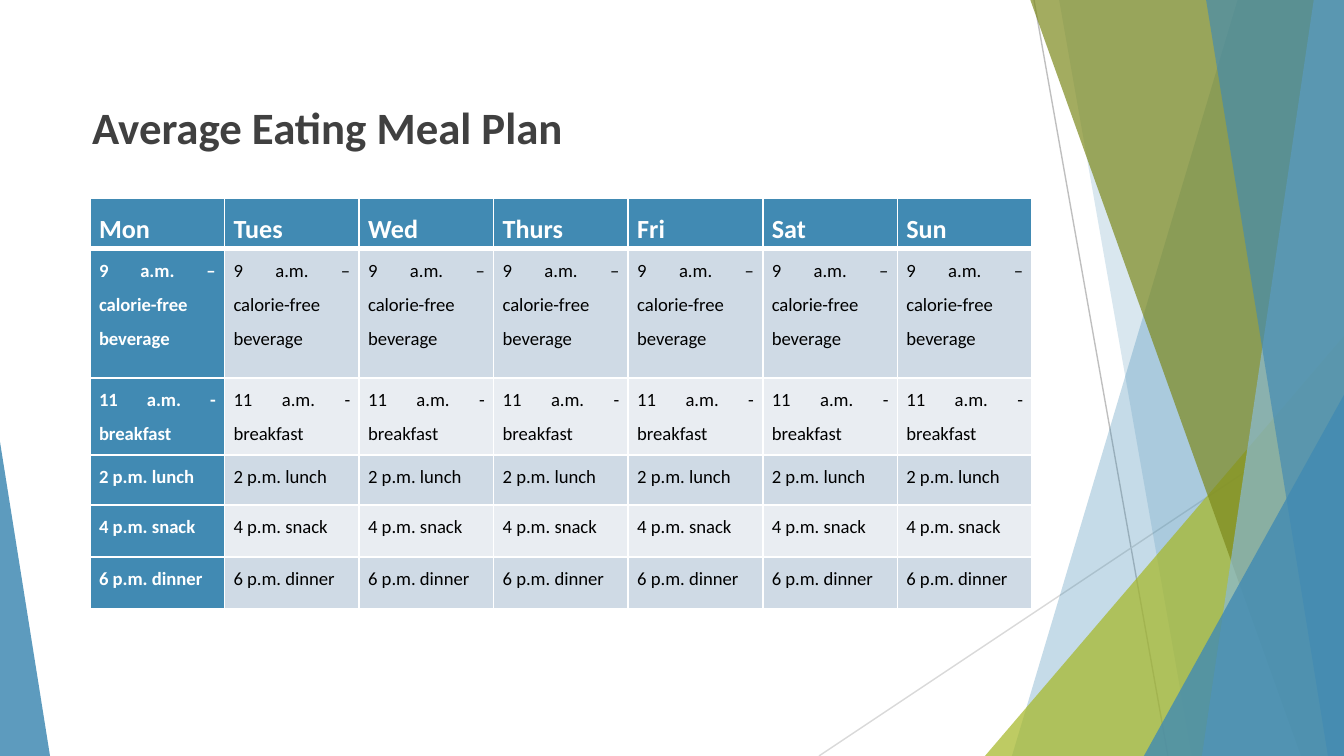
from lxml.etree import SubElement
from pptx import Presentation
from pptx.dml.color import RGBColor
from pptx.enum.shapes import MSO_CONNECTOR, MSO_SHAPE
from pptx.enum.text import MSO_ANCHOR, PP_ALIGN
from pptx.oxml.ns import qn
from pptx.util import Pt

SCALE = 914400 / 134.4  # EMU in one px
WIDTH, HEIGHT = 1344, 756

WHITE = RGBColor(0xFF, 0xFF, 0xFF)
BLACK = RGBColor(0x00, 0x00, 0x00)
DARK_GREY = RGBColor(0x40, 0x40, 0x40)
MID_GREY = RGBColor(0xBF, 0xBF, 0xBF)
LIGHT_GREY = RGBColor(0xD9, 0xD9, 0xD9)
BLUE = RGBColor(0x41, 0x8A, 0xB3)
SKY = RGBColor(0x8A, 0xBA, 0xD4)
LIME = RGBColor(0xA6, 0xB7, 0x27)
OLIVE = RGBColor(0x7D, 0x89, 0x1D)
BAND_DARK = RGBColor(0xCF, 0xDA, 0xE5)
BAND_LIGHT = RGBColor(0xE9, 0xED, 0xF2)

DAYS = ["Mon", "Tues", "Wed", "Thurs", "Fri", "Sat", "Sun"]
MEALS = ["9 a.m. – calorie-free beverage", "11 a.m. - breakfast",
         "2 p.m. lunch", "4 p.m. snack", "6 p.m. dinner"]
ROW_HEIGHTS = [51, 129, 77, 50, 52, 52]


def px(length):
    return round(length * SCALE)


def write(frame, text, size, color, bold=False, align=PP_ALIGN.LEFT, spacing=None):
    frame.word_wrap = True
    paragraph = frame.paragraphs[0]
    paragraph.alignment = align
    paragraph.line_spacing = spacing
    run = paragraph.add_run()
    run.text = text
    font = run.font
    font.name, font.size, font.bold = "Calibri", Pt(size), bold
    font.color.rgb = color


def paint(shape, color, opacity):
    """Flat, partly transparent fill without line or shadow."""
    shape.shadow.inherit = False
    shape.line.fill.background()
    shape.fill.solid()
    shape.fill.fore_color.rgb = color
    solid_color = shape.fill._xPr.find(qn("a:solidFill"))[0]
    SubElement(solid_color, qn("a:alpha"), val=str(opacity * 1000))


def add_line(slide, start, end, color):
    line = slide.shapes.add_connector(
        MSO_CONNECTOR.STRAIGHT, *(px(value) for value in (*start, *end)))
    line.line.color.rgb = color
    line.line.width = Pt(0.75)
    SubElement(line._element.spPr, qn("a:effectLst"))


def add_triangle(slide, left, top, width, height, apex, color, opacity):
    triangle = slide.shapes.add_shape(
        MSO_SHAPE.ISOSCELES_TRIANGLE, px(left), px(top), px(width), px(height))
    triangle.adjustments[0] = apex
    paint(triangle, color, opacity)


def add_facet(slide, top_x, bottom_x, right, bottom, color, opacity):
    """Sheet with a slanted left edge that fills up to the right border."""
    builder = slide.shapes.build_freeform(top_x, -1, scale=SCALE)
    builder.add_line_segments([(right, -1), (right, bottom), (bottom_x, bottom)])
    paint(builder.convert_to_shape(), color, opacity)


def add_right_panel(slide, left, top, width, height):
    right, bottom = left + width, top + height

    def facet(top_x, bottom_x, color, opacity):
        add_facet(slide, left + top_x, left + bottom_x, right, bottom, color, opacity)

    def corner(x, y, color, opacity):
        add_triangle(slide, left + x, top + y, width - x, height - y, 1, color, opacity)

    add_line(slide, (left + 215, top), (left + 349, bottom), MID_GREY)
    add_line(slide, (right, top + 406), (left, bottom), LIGHT_GREY)
    facet(419, 193, BLUE, 30)
    facet(240, 373, BLUE, 20)
    corner(166, 336, LIME, 72)
    facet(211, 482, OLIVE, 70)
    facet(495, 383, SKY, 70)
    facet(387, 509, BLUE, 65)
    corner(325, 395, BLUE, 80)


def add_title(slide, left, top, width, height):
    box = slide.shapes.add_textbox(px(left), px(top), px(width), px(height))
    box.text_frame.vertical_anchor = MSO_ANCHOR.TOP
    write(box.text_frame, "Average Eating Meal Plan", 24, DARK_GREY, bold=True)


def set_borders(cell, **widths):
    properties = cell._tc.get_or_add_tcPr()
    for side in "LRTB":
        line = SubElement(properties, qn("a:ln" + side), w=str(Pt(widths.get(side, 1))))
        fill = SubElement(line, qn("a:solidFill"))
        SubElement(fill, qn("a:srgbClr"), val=str(WHITE))


def add_meal_table(slide, left, top, width, height):
    table = slide.shapes.add_table(len(MEALS) + 1, len(DAYS), px(left), px(top),
                                   px(width), px(height)).table
    table.first_row = table.horz_banding = False
    for column in table.columns:
        column.width = px(width / len(DAYS))
    for row, row_height in zip(table.rows, ROW_HEIGHTS):
        row.height = px(row_height)

    texts = [DAYS] + [[meal] * len(DAYS) for meal in MEALS]
    for row_index, row_texts in enumerate(texts):
        band = BAND_DARK if row_index % 2 else BAND_LIGHT
        # Thick rule between the day names and the meals
        rule = {0: {"B": 3}, 1: {"T": 3}}.get(row_index, {})
        for column_index, text in enumerate(row_texts):
            cell = table.cell(row_index, column_index)
            heading = row_index == 0 or column_index == 0
            cell.margin_left = cell.margin_right = px(9)
            cell.margin_top = cell.margin_bottom = 0
            set_borders(cell, **rule)
            cell.fill.solid()
            cell.fill.fore_color.rgb = BLUE if heading else band
            write(cell.text_frame, text, 10 if row_index else 14,
                  WHITE if heading else BLACK, bold=heading,
                  align=PP_ALIGN.JUSTIFY, spacing=1.5)


def main():
    presentation = Presentation()
    presentation.slide_width, presentation.slide_height = px(WIDTH), px(HEIGHT)
    slide = presentation.slides.add_slide(presentation.slide_layouts[6])

    # Background decoration
    add_right_panel(slide, 819, 0, WIDTH - 819, HEIGHT)
    add_triangle(slide, 0, 442, 50, HEIGHT - 442, 0, BLUE, 85)

    # Content
    add_title(slide, 79, 93, 614, 95)
    add_meal_table(slide, 90, 198, 942, sum(ROW_HEIGHTS))

    presentation.save("out.pptx")


if __name__ == "__main__":
    main()
